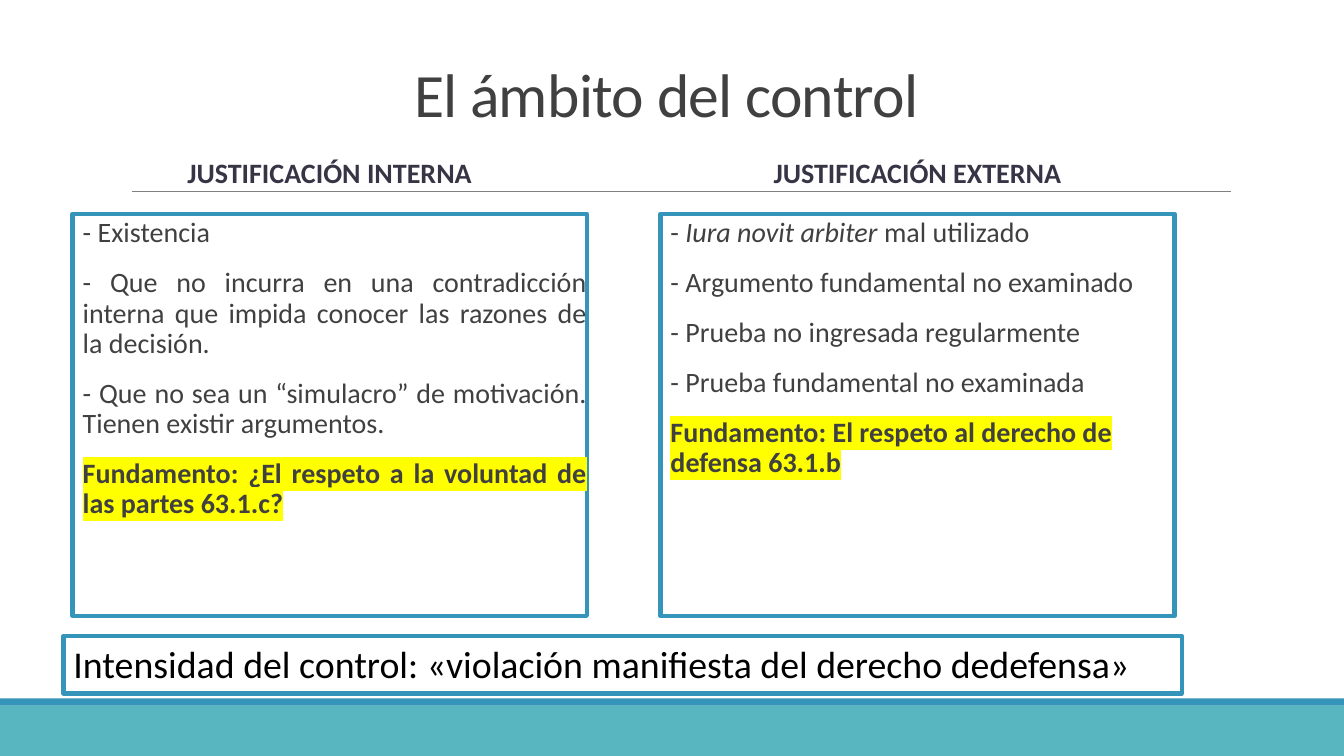
import pptx
import pptx.util
import pptx.dml.color
import pptx.enum.shapes
import pptx.enum.text
import pptx.oxml
import pptx.oxml.ns
from lxml import etree

Inches, Pt = pptx.util.Inches, pptx.util.Pt
ALIGN = pptx.enum.text.PP_ALIGN
ANCHOR = pptx.enum.text.MSO_ANCHOR
qn = pptx.oxml.ns.qn

# Content: a paragraph is a list of (text, style) runs; b bold, i italic, h highlight
TITLE = "El ámbito del control"
COLUMNS = [
    ("JUSTIFICACIÓN INTERNA", ALIGN.JUSTIFY, [
        [("- Existencia", "")],
        [("- Que no incurra en una contradicción interna que impida "
          "conocer las razones de la decisión.", "")],
        [("- Que no sea un “simulacro” de motivación. "
          "Tienen existir argumentos.", "")],
        [("Fundamento: ¿El respeto a la voluntad de las partes 63.1.c?", "bh")],
    ]),
    ("JUSTIFICACIÓN EXTERNA", ALIGN.LEFT, [
        [("- ", ""), ("Iura novit arbiter", "i"), (" mal utilizado", "")],
        [("- Argumento fundamental no examinado", "")],
        [("- Prueba no ingresada regularmente", "")],
        [("- Prueba fundamental no examinada", "")],
        [("Fundamento: El respeto al derecho de defensa 63.1.b", "bh")],
    ]),
]
CLOSING = "Intensidad del control: «violación manifiesta del derecho dedefensa»"

BLUE, TEAL, GRAY, INK = "3494BA", "58B6C0", "404040", "373545"
LEFT, STEP, WIDE = 0.72, 5.83, 5.1
HEAD_Y, HEAD_H, BOX_Y, BOX_H = 1.34, 0.79, 2.12, 3.99


def color(text):
    return pptx.dml.color.RGBColor.from_string(text)


def place(shape, x, y, w, h):
    shape.left, shape.top = Inches(x), Inches(y)
    shape.width, shape.height = Inches(w), Inches(h)


def border(shape):
    shape.line.color.rgb = color(BLUE)
    shape.line.width = Pt(3)


def write(frame, paras, size=20, ink=GRAY, align=ALIGN.LEFT, anchor=ANCHOR.TOP,
          lines=0.9, before=12, after=2, bullet=False, track=0):
    frame.word_wrap = True
    frame.auto_size = pptx.enum.text.MSO_AUTO_SIZE.NONE
    frame.vertical_anchor = anchor
    for n, runs in enumerate(paras):
        para = frame.add_paragraph() if n else frame.paragraphs[0]
        para.alignment = align
        para.line_spacing = lines
        para.space_before, para.space_after = Pt(before), Pt(after)
        if bullet:
            props = para._p.get_or_add_pPr()
            props.set("marL", str(Inches(0.1)))
            props.set("indent", str(-Inches(0.1)))
            etree.SubElement(props, qn("a:buChar")).set("char", " ")
        for text, style in runs:
            run = para.add_run()
            run.text = text
            font = run.font
            font.name, font.size = "Calibri", Pt(size)
            font.bold, font.italic = "b" in style, "i" in style
            font.color.rgb = color(ink)
            props = run._r.get_or_add_rPr()
            if track:
                props.set("spc", str(track))
            if "h" in style:
                mark = etree.Element(qn("a:highlight"))
                etree.SubElement(mark, qn("a:srgbClr")).set("val", "FFFF00")
                props.find(qn("a:solidFill")).addnext(mark)


def main():
    deck = pptx.Presentation()
    deck.slide_width, deck.slide_height = Inches(13.33), Inches(7.5)
    slide = deck.slides.add_slide(deck.slide_layouts[4])
    shapes, holders = slide.shapes, slide.placeholders

    # Bands at the foot
    for y, h, fill in [(7, 0.5, TEAL), (6.93, 0.07, BLUE)]:
        band = shapes.add_shape(pptx.enum.shapes.MSO_SHAPE.RECTANGLE,
                                0, Inches(y), deck.slide_width, Inches(h))
        band.shadow.inherit = False
        band.fill.solid()
        band.fill.fore_color.rgb = color(fill)
        band.line.fill.background()

    # Rule below the headings
    rule = shapes.add_connector(pptx.enum.shapes.MSO_CONNECTOR.STRAIGHT,
                                Inches(1.31), Inches(1.9), Inches(12.21), Inches(1.9))
    rule.line.color.rgb = color("808080")
    rule.line.width = Pt(0.5)
    etree.SubElement(rule._element.spPr, qn("a:effectLst"))

    # Title
    place(shapes.title, LEFT, 0.55, 11.78, 0.79)
    write(shapes.title.text_frame, [[(TITLE, "")]], size=44, align=ALIGN.CENTER,
          anchor=ANCHOR.BOTTOM, lines=0.85, before=0, after=0, track=-50)

    # Two columns, each a heading over a framed list
    for n, (name, align, items) in enumerate(COLUMNS):
        x = LEFT + n * STEP
        head, box = holders[2 * n + 1], holders[2 * n + 2]
        place(head, x, HEAD_Y, WIDE, HEAD_H)
        write(head.text_frame, [[(name, "b")]], ink=INK,
              align=ALIGN.CENTER, anchor=ANCHOR.MIDDLE)
        place(box, x, BOX_Y, WIDE, BOX_H)
        border(box)
        frame = box.text_frame
        frame.margin_left = frame.margin_right = 0
        write(frame, items, align=align, bullet=True)

    # Closing statement
    note = shapes.add_textbox(Inches(0.63), Inches(6.31), Inches(11.09), Inches(0.57))
    border(note)
    write(note.text_frame, [[(CLOSING, "")]], size=27, ink="000000",
          lines=1.0, before=0, after=0)

    deck.save("out.pptx")


if __name__ == "__main__":
    main()
